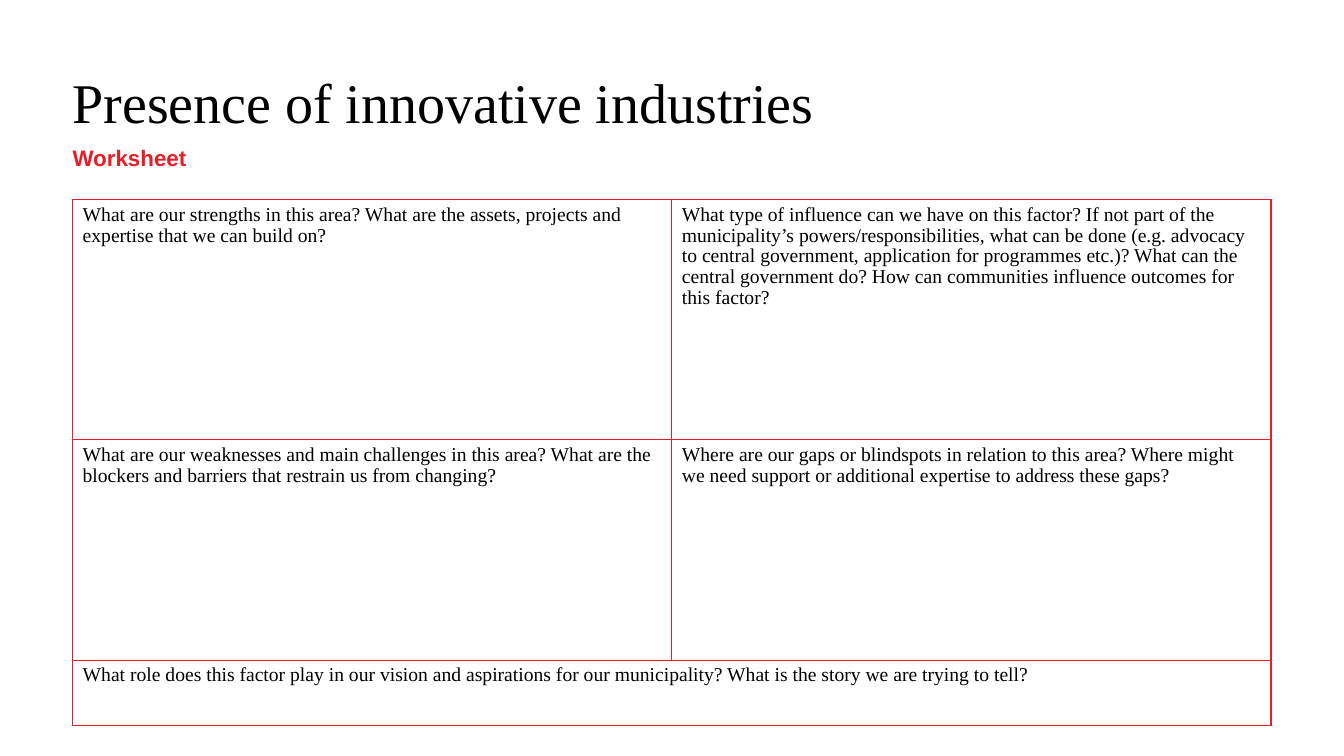
from lxml import etree
from pptx import Presentation
from pptx.dml.color import RGBColor
from pptx.enum.text import MSO_ANCHOR, PP_ALIGN
from pptx.oxml.ns import qn
from pptx.util import Cm, Pt

TOP, LEFT = MSO_ANCHOR.TOP, PP_ALIGN.LEFT
SERIF, SANS = "Times New Roman", "Arial"
BLACK, RED = "000000", "E61E28"

TITLE = "Presence of innovative industries"
SUBTITLE = "Worksheet"
QUESTIONS = [
    ["What are our strengths in this area? What are the assets, projects and "
     "expertise that we can build on?",
     "What type of influence can we have on this factor? If not part of the "
     "municipality’s powers/responsibilities, what can be done (e.g. advocacy "
     "to central government, application for programmes etc.)? What can the "
     "central government do? How can communities influence outcomes for this factor?"],
    ["What are our weaknesses and main challenges in this area? What are the "
     "blockers and barriers that restrain us from changing?",
     "Where are our gaps or blindspots in relation to this area? Where might "
     "we need support or additional expertise to address these gaps?"],
    ["What role does this factor play in our vision and aspirations for our "
     "municipality? What is the story we are trying to tell?"],
]

# Lengths in centimetres
MARGIN = 1.83
TABLE_TOP, TABLE_WIDTH = 5.03, 30.2
ROW_HEIGHTS = [6.05, 5.56, 1.65]
COLUMN_COUNT = 2


def color(value):
    return RGBColor.from_string(value)


def write(text_frame, text, font_name, size, font_color, bold=False):
    text_frame.word_wrap = True
    text_frame.text = text
    paragraph = text_frame.paragraphs[0]
    paragraph.alignment = LEFT
    font = paragraph.font
    font.name, font.size, font.bold = font_name, Pt(size), bold
    font.color.rgb = color(font_color)
    return paragraph


def clear_insets(text_frame):
    text_frame.margin_left = text_frame.margin_right = 0
    text_frame.margin_top = text_frame.margin_bottom = 0
    text_frame.vertical_anchor = TOP


def add_borders(cell, line_color, width):
    properties = cell._tc.get_or_add_tcPr()
    for position, side in enumerate(("a:lnL", "a:lnR", "a:lnT", "a:lnB")):
        line = etree.Element(qn(side), w=str(Pt(width)))
        fill = etree.SubElement(line, qn("a:solidFill"))
        etree.SubElement(fill, qn("a:srgbClr"), val=line_color)
        properties.insert(position, line)


presentation = Presentation()
presentation.slide_width, presentation.slide_height = Cm(33.87), Cm(19.05)
slide = presentation.slides.add_slide(presentation.slide_layouts[5])

# Title
title = slide.shapes.title
title.left, title.top, title.width, title.height = Cm(MARGIN), Cm(MARGIN), Cm(31.06), Cm(1.47)
clear_insets(title.text_frame)
write(title.text_frame, TITLE, SERIF, 40, BLACK).line_spacing = Pt(44)

# Subtitle
subtitle = slide.shapes.add_textbox(Cm(MARGIN), Cm(3.63), Cm(14.78), Cm(0.69))
clear_insets(subtitle.text_frame)
write(subtitle.text_frame, SUBTITLE, SANS, 16, RED, bold=True).space_after = Pt(9)

# Worksheet table
table = slide.shapes.add_table(
    len(ROW_HEIGHTS), COLUMN_COUNT, Cm(MARGIN), Cm(TABLE_TOP),
    Cm(TABLE_WIDTH), Cm(sum(ROW_HEIGHTS))).table
table.first_row = table.horz_banding = False
for column in table.columns:
    column.width = Cm(TABLE_WIDTH / COLUMN_COUNT)
for row, height in zip(table.rows, ROW_HEIGHTS):
    row.height = Cm(height)
for cell in table.iter_cells():
    cell.fill.background()
    add_borders(cell, RED, 1)
table.cell(2, 0).merge(table.cell(2, 1))
for row_index, questions in enumerate(QUESTIONS):
    for column_index, question in enumerate(questions):
        cell = table.cell(row_index, column_index)
        write(cell.text_frame, question, SERIF, 14, BLACK).line_spacing = 0.96

presentation.save("out.pptx")
